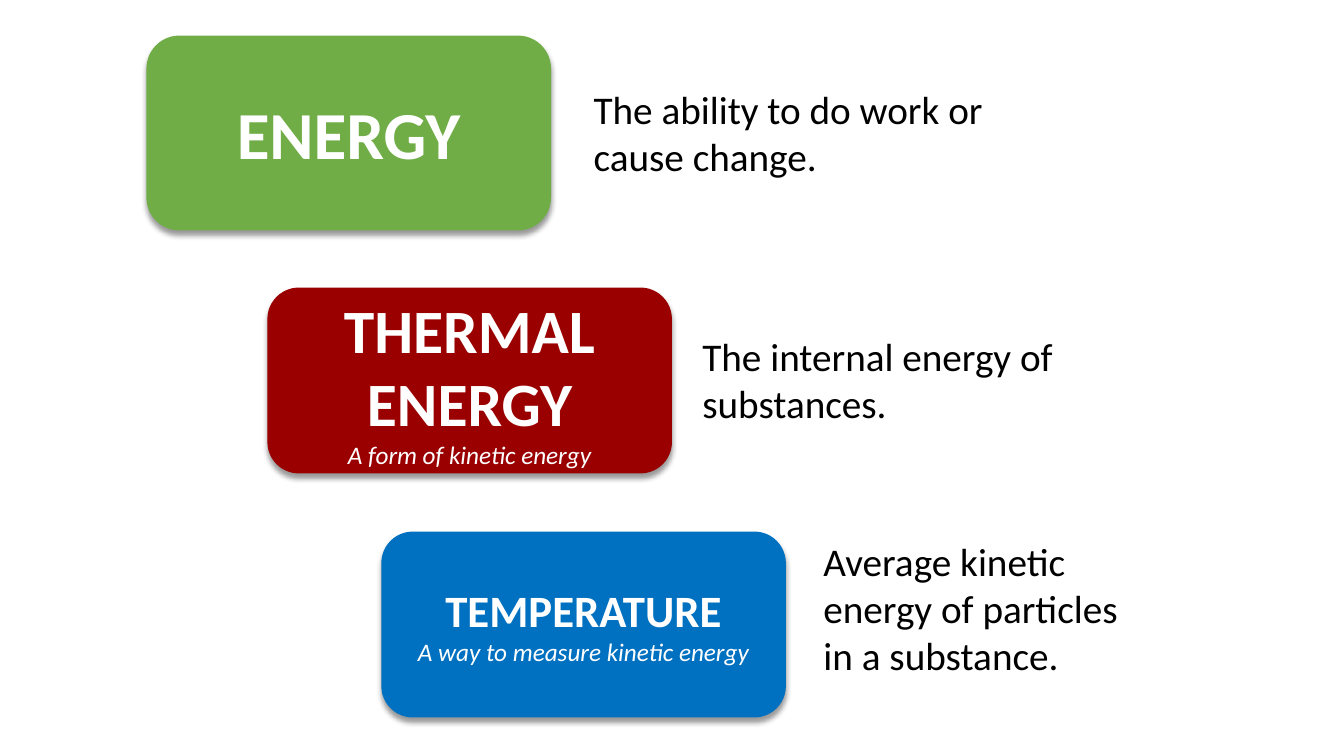
import lxml.etree
import pptx
import pptx.dml.color
import pptx.enum.shapes
import pptx.enum.text
import pptx.oxml.ns
import pptx.util

Pt = pptx.util.Pt
qn = pptx.oxml.ns.qn
RGBColor = pptx.dml.color.RGBColor

THEME = {
    "font": "Calibri",
    "card_text": "FFFFFF",
    "definition_text": "000000",
    "shadow": "000000",
    "energy": "70AD47",
    "thermal": "9A0000",
    "temperature": "0070C0",
    "definition_size": 28,
    "note_size": 18,
}

TERMS = [
    {
        "term": "ENERGY", "note": "", "color": "energy", "size": 48,
        "definition": "The ability to do work or cause change.",
        "card": (105.1, 25.9, 288, 138.2), "text_box": (311.8, 31.7, 293.8, 75.1),
    },
    {
        "term": "THERMAL ENERGY", "note": "A form of kinetic energy",
        "color": "thermal", "size": 44,
        "definition": "The internal energy of substances.",
        "card": (191.5, 205.9, 288, 131.8), "text_box": (303.1, 28.1, 293.8, 75.1),
    },
    {
        "term": "TEMPERATURE", "note": "A way to measure kinetic energy",
        "color": "temperature", "size": 32,
        "definition": "Average kinetic energy of particles in a substance.",
        "card": (272.9, 380.2, 288, 131.8), "text_box": (308.2, 0, 231.1, 108.7),
    },
]


def write_run(paragraph, text, color, **formats):
    """Add a run of text in the theme font with the given format values."""
    run = paragraph.add_run()
    run.text = text
    run.font.color.rgb = RGBColor.from_string(color)
    for name, value in {"name": THEME["font"], **formats}.items():
        setattr(run.font, name, value)


def add_soft_shadow(shape):
    """Give a shape a soft shadow falling straight down."""
    effects = lxml.etree.SubElement(shape.element.spPr, qn("a:effectLst"))
    shadow = lxml.etree.SubElement(effects, qn("a:outerShdw"))
    values = {"blurRad": Pt(4), "dist": Pt(3), "dir": 90 * 60000, "rotWithShape": 0}
    for name, value in values.items():
        shadow.set(name, str(int(value)))
    color = lxml.etree.SubElement(shadow, qn("a:srgbClr"), val=THEME["shadow"])
    lxml.etree.SubElement(color, qn("a:alpha"), val="40000")


def add_card(slide, box, entry):
    """Draw the rounded card with its term and optional note."""
    shape = slide.shapes.add_shape(
        pptx.enum.shapes.MSO_SHAPE.ROUNDED_RECTANGLE, *map(Pt, box))
    color = RGBColor.from_string(THEME[entry["color"]])
    shape.fill.solid()
    shape.fill.fore_color.rgb = color
    shape.line.color.rgb = color
    shape.line.width = Pt(1)
    add_soft_shadow(shape)

    frame = shape.text_frame
    frame.word_wrap = True
    frame.vertical_anchor = pptx.enum.text.MSO_ANCHOR.MIDDLE
    write_run(frame.paragraphs[0], entry["term"], THEME["card_text"],
              size=Pt(entry["size"]), bold=True)
    if entry["note"]:
        write_run(frame.add_paragraph(), entry["note"], THEME["card_text"],
                  size=Pt(THEME["note_size"]), italic=True)
    for paragraph in frame.paragraphs:
        paragraph.alignment = pptx.enum.text.PP_ALIGN.CENTER


def add_definition(slide, box, text):
    """Place a definition in a wrapping text box."""
    frame = slide.shapes.add_textbox(*map(Pt, box)).text_frame
    frame.word_wrap = True
    frame.auto_size = pptx.enum.text.MSO_AUTO_SIZE.SHAPE_TO_FIT_TEXT
    write_run(frame.paragraphs[0], text, THEME["definition_text"],
              size=Pt(THEME["definition_size"]))


def add_term(slide, entry):
    """Place a card and, relative to its corner, its definition."""
    left, top, _, _ = entry["card"]
    offset_x, offset_y, width, height = entry["text_box"]
    add_card(slide, entry["card"], entry)
    add_definition(slide, (left + offset_x, top + offset_y, width, height),
                   entry["definition"])


def main():
    """Build and save the energy vocabulary slide."""
    presentation = pptx.Presentation()
    presentation.slide_width = Pt(960)
    presentation.slide_height = Pt(540)
    slide = presentation.slides.add_slide(presentation.slide_layouts[6])
    for entry in TERMS:
        add_term(slide, entry)
    presentation.save("out.pptx")


if __name__ == "__main__":
    main()
